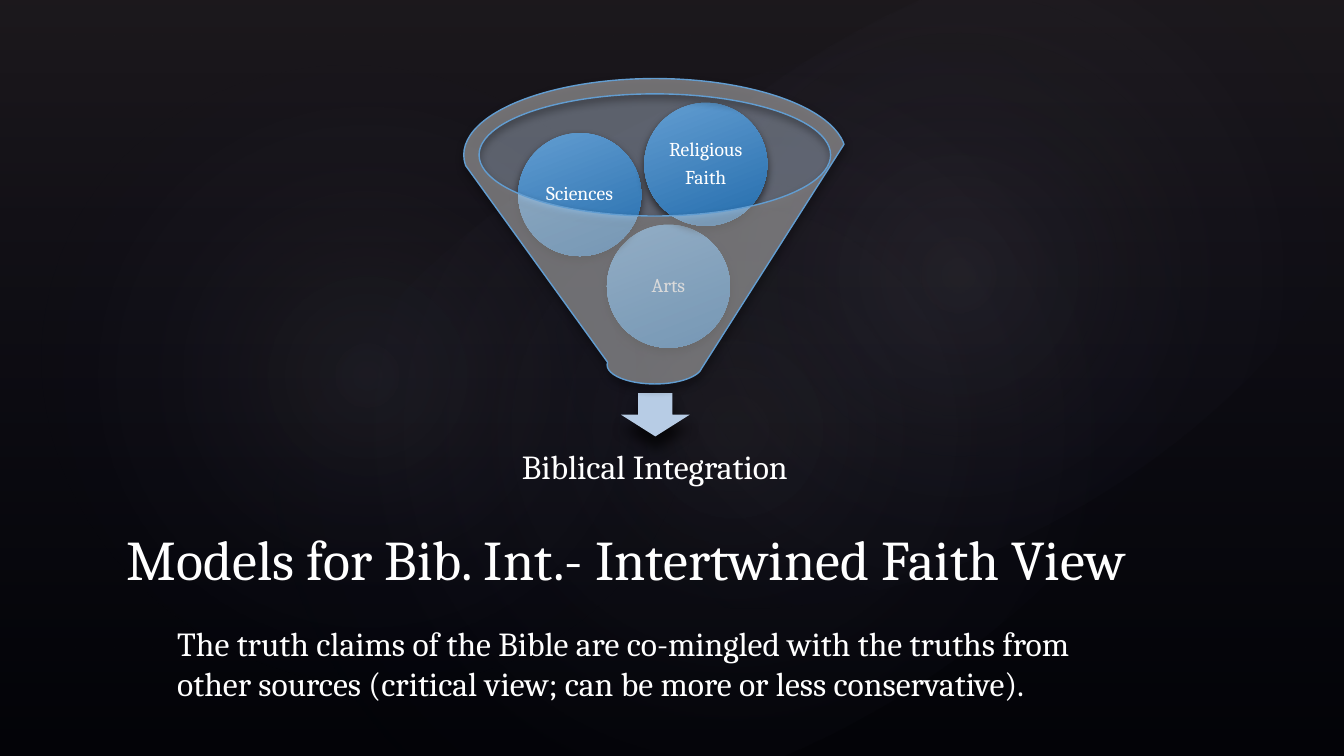
from lxml import etree
from pptx import Presentation
from pptx import util as u
from pptx.dml.color import RGBColor
from pptx.enum import shapes, text
from pptx.oxml.ns import nsdecls

FONT = "Cambria"
COLORS = {"black": "000000", "white": "FFFFFF", "plum": "504652", "navy": "242852",
          "mist": "C4BCC6", "rim": "C5D5E9", "arrow": "B7CCE5",
          "blue": "629DD1", "deep": "256DAD"}

# Content: places are left, top, width, height in inches
TITLE = "Models for Bib. Int.- Intertwined Faith View"
BODY = ("The truth claims of the Bible are co-mingled with the truths from other sources "
        "(critical view; can be more or less conservative).")
RESULT = "Biblical Integration"
BALLS = [(["Arts"], 6.02, 2.23), (["Sciences"], 5.14, 1.32),
         (["Religious", "Faith"], 6.39, 1.02)]
GLOWS = [((2, 1.14, 10.56, 6.24), 328.7, 7), ((0.61, 0.46, 6.06, 6.53), 294.3, 8),
         ((4.78, 0.13, 9.45, 5.2), 328.7, 8)]
BALL, LABEL = 1.22, 0.86
SOFT = (60, 6, 3)     # shadow alpha %, blur pt, distance pt
STRONG = (70, 9, 9)
SHAPE = shapes.MSO_SHAPE

deck = Presentation()
deck.slide_width, deck.slide_height = u.Inches(13.33), u.Inches(7.5)
page = deck.slides.add_slide(deck.slide_layouts[6])


def rgb(name):
    return RGBColor.from_string(COLORS[name])


def color_xml(name, alpha):
    return (f'<a:srgbClr val="{COLORS[name]}">'
            f'<a:alpha val="{alpha * 1000}"/></a:srgbClr>')


def add_shape(kind, place, fill=None, alpha=100, shadow=None):
    shape = page.shapes.add_shape(kind, *map(u.Inches, place))
    shape.shadow.inherit = False
    shape.line.fill.background()
    if fill:
        shape.fill.solid()
        shape.fill.fore_color.rgb = rgb(fill)
        color = shape._element.spPr.find(".//{*}solidFill/{*}srgbClr")
        etree.SubElement(color, color.tag.replace("srgbClr", "alpha"), val=str(alpha * 1000))
    if shadow:
        strength, blur, distance = shadow
        shape._element.spPr.find("{*}effectLst").append(etree.fromstring(
            f'<a:outerShdw {nsdecls("a")} blurRad="{u.Pt(blur)}" dist="{u.Pt(distance)}" '
            f'dir="5400000" rotWithShape="0">{color_xml("black", strength)}</a:outerShdw>'))
    return shape


def set_gradient(shape, stops, angle=None):
    """Linear at the given angle, or radial from the centre without one."""
    marks = "".join(f'<a:gs pos="{at * 1000}">{color_xml(name, alpha)}</a:gs>'
                    for at, name, alpha in stops)
    if angle is None:
        course = ('<a:path path="circle"><a:fillToRect l="50000" t="50000" '
                  'r="50000" b="50000"/></a:path>')
    else:
        course = f'<a:lin ang="{angle * 60000}" scaled="0"/>'
    shape.fill.background()
    properties = shape._element.spPr
    properties.replace(properties.find("{*}noFill"), etree.fromstring(
        f'<a:gradFill {nsdecls("a")} rotWithShape="1"><a:gsLst>{marks}</a:gsLst>'
        f'{course}</a:gradFill>'))


def add_text(lines, place, size, anchor="TOP", inset=None, para_format=None):
    box = page.shapes.add_textbox(*map(u.Inches, place))
    frame = box.text_frame
    frame.word_wrap = True
    frame.vertical_anchor = text.MSO_ANCHOR[anchor]
    if inset is not None:
        for side in ("left", "top", "right", "bottom"):
            setattr(frame, f"margin_{side}", u.Inches(inset))
    for index, line in enumerate(lines):
        para = frame.add_paragraph() if index else frame.paragraphs[0]
        for key, value in (para_format or {}).items():
            setattr(para, key, value)
        span = para.add_run()
        span.text = line
        for key, value in {"name": FONT, "size": u.Pt(size)}.items():
            setattr(span.font, key, value)
        span.font.color.rgb = rgb("white")


def diagram_format(size):
    return {"alignment": text.PP_ALIGN.CENTER, "line_spacing": 0.9,
            "space_after": u.Pt(size * 0.35)}


# Background with soft glows
back = page.background.fill
back.solid()
back.fore_color.rgb = rgb("black")
veil = add_shape(SHAPE.RECTANGLE, (0, 0, 13.33, 7.5))
set_gradient(veil, [(0, "plum", 36), (100, "navy", 10)], 90)
for place, turn, alpha in GLOWS:
    glow = add_shape(SHAPE.OVAL, place)
    glow.rotation = turn
    set_gradient(glow, [(0, "mist", alpha), (58, "navy", 0)])

# Funnel mouth, arrow and result
add_shape(SHAPE.OVAL, (4.75, 0.93, 3.49, 1.21), "rim", 40)
add_shape(SHAPE.DOWN_ARROW, (6.16, 3.9, 0.68, 0.43), "arrow", shadow=STRONG)
add_text([RESULT], (4.87, 4.24, 3.25, 0.81), 24, "MIDDLE", 0.19, diagram_format(24))

# Balls with centred labels
for lines, left, top in BALLS:
    ball = add_shape(SHAPE.OVAL, (left, top, BALL, BALL), shadow=SOFT)
    set_gradient(ball, [(0, "blue", 100), (100, "deep", 100)], 69)
    gap = (BALL - LABEL) / 2
    add_text(lines, (left + gap, top + gap, LABEL, LABEL), 14, "MIDDLE", 0.02,
             diagram_format(14))

# Translucent funnel over the balls
funnel = add_shape(SHAPE.FUNNEL, (4.6, 0.78, 3.79, 3.03), "white", 40, SOFT)
funnel.line.color.rgb = rgb("blue")
funnel.line.width = u.Pt(1)

# Title and body
add_text([TITLE], (1.16, 4.92, 11, 1), 40, "BOTTOM")
add_text([BODY], (1.66, 6.13, 9.83, 0.91), 24)

deck.save("out.pptx")
